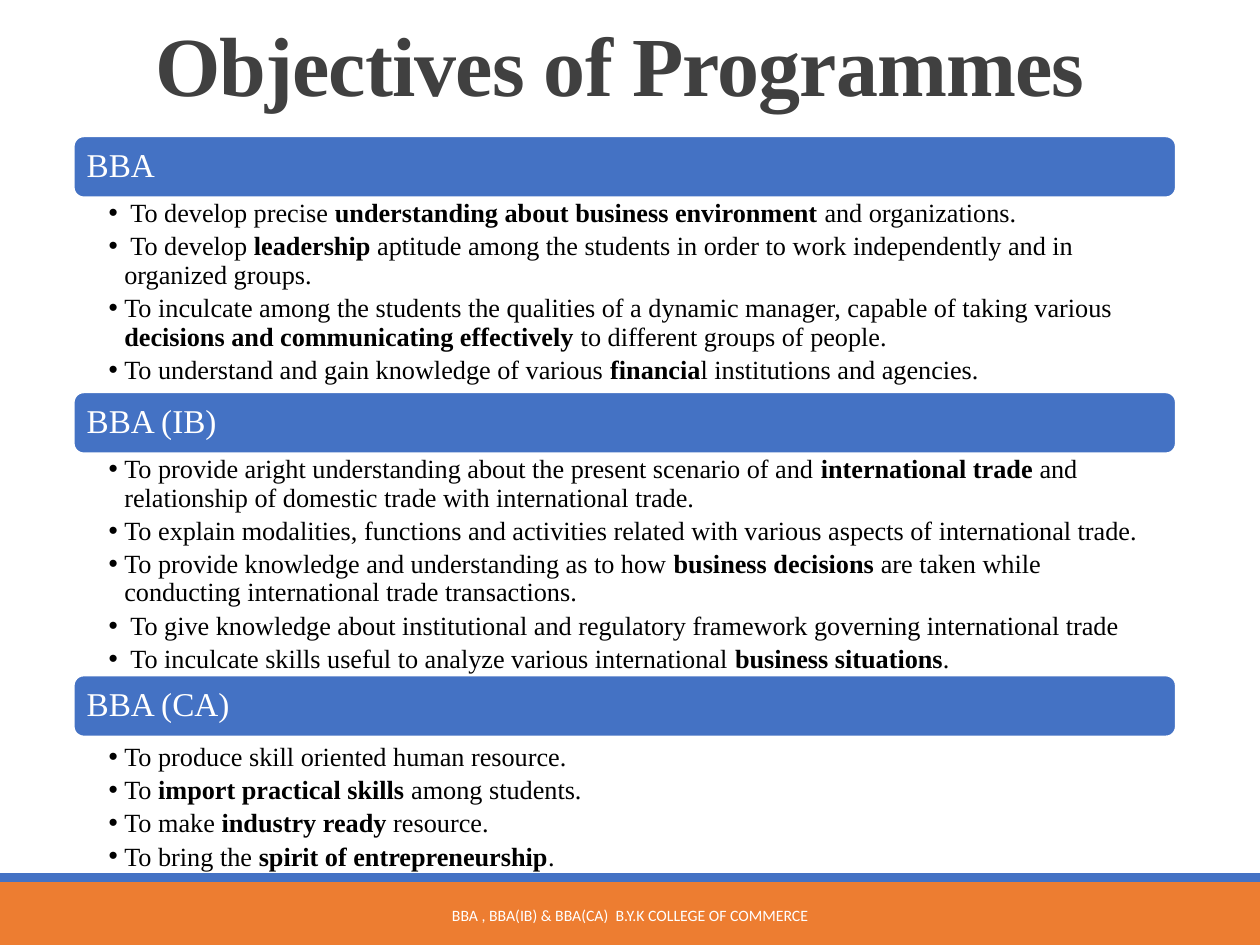
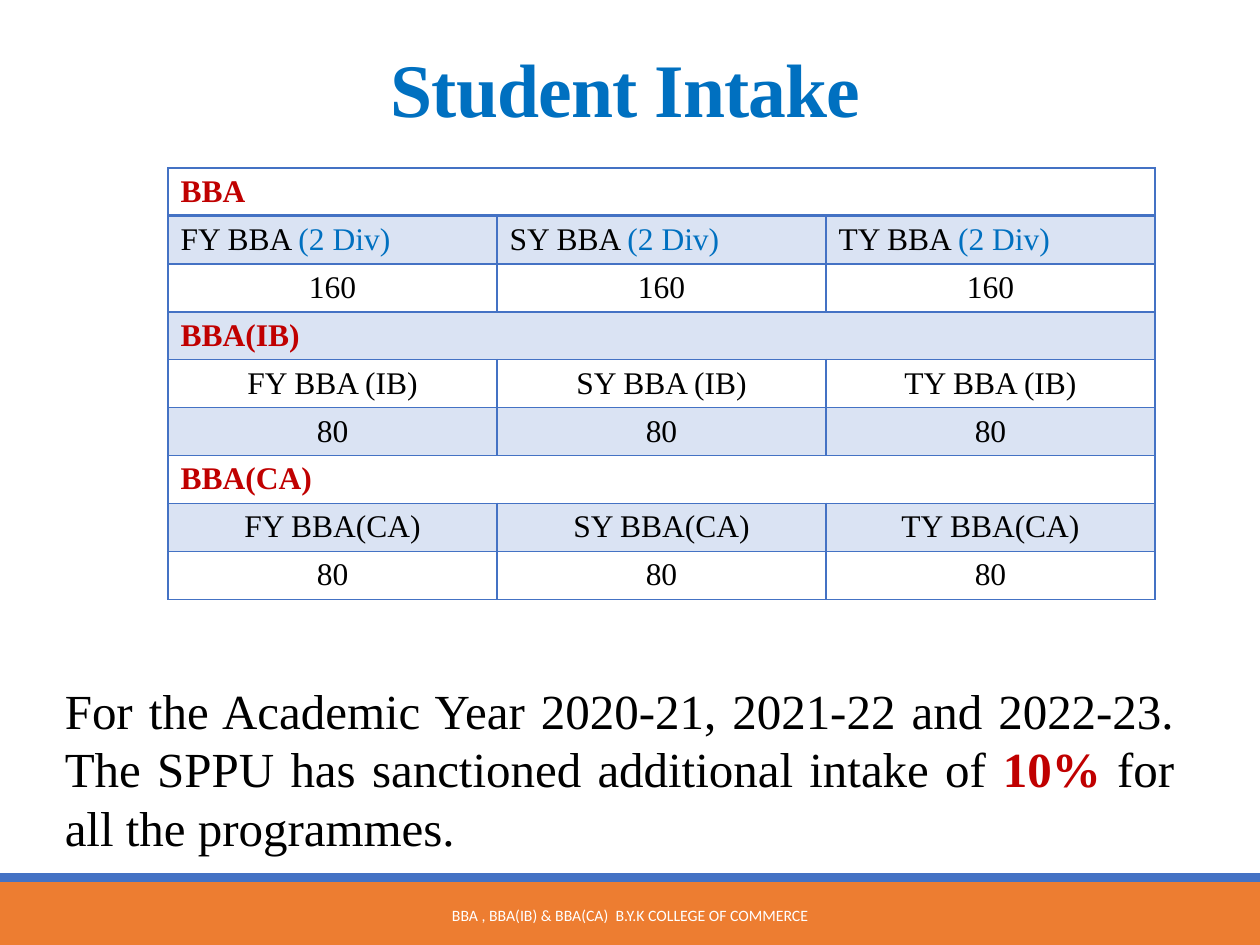
from lxml import etree
from pptx import Presentation
from pptx.dml.color import RGBColor
from pptx.enum.shapes import MSO_SHAPE
from pptx.enum.text import MSO_ANCHOR, MSO_AUTO_SIZE, PP_ALIGN
from pptx.oxml.ns import qn
from pptx.util import Pt

RECT, ROUND_RECT = MSO_SHAPE.RECTANGLE, MSO_SHAPE.ROUNDED_RECTANGLE
TOP, MIDDLE, BOTTOM = MSO_ANCHOR.TOP, MSO_ANCHOR.MIDDLE, MSO_ANCHOR.BOTTOM
LEFT, CENTER, JUSTIFY = PP_ALIGN.LEFT, PP_ALIGN.CENTER, PP_ALIGN.JUSTIFY
NO_AUTOFIT = MSO_AUTO_SIZE.NONE

WIDTH, HEIGHT = 720, 540
SERIF, SANS = "Times New Roman", "Calibri"
COLORS = {
    "orange": "ED7D31", "blue": "4472C4", "tint": "DAE3F3", "white": "FFFFFF",
    "title": "404040", "bright": "0070C0", "red": "C00000", "black": "000000",
}
FOOTER = "BBA , BBA(IB) & BBA(CA)  B.Y.K COLLEGE OF COMMERCE"

OBJECTIVES = [
    ("BBA", 111.2, 0, [
        " To develop precise *understanding about business environment *and organizations.",
        " To develop *leadership* aptitude among the students in order to work "
        "independently and in organized groups.",
        "To inculcate among the students the qualities of a dynamic manager, capable of "
        "taking various *decisions and communicating effectively *to different groups of people.",
        "To understand and gain knowledge of various *financia*l institutions and agencies.",
    ]),
    ("BBA (IB)", 126.7, 0, [
        "To provide aright understanding about the present scenario of and "
        "*international trade *and relationship of domestic trade with international trade.",
        "To explain modalities, functions and activities related with various aspects of "
        "international trade.",
        "To provide knowledge and understanding as to how *business decisions *are taken "
        "while conducting international trade transactions.",
        " To give knowledge about institutional and regulatory framework governing "
        "international trade",
        " To inculcate skills useful to analyze various international *business situations*.",
    ]),
    ("BBA (CA)", 75.5, 2.5, [
        "To produce skill oriented human resource.",
        "To *import practical skills *among students.",
        "To make *industry ready *resource.",
        "To bring the *spirit of entrepreneurship*.",
    ]),
]
YEARS = ("FY", "SY", "TY")
INTAKE = [
    ("BBA", " BBA ", "(2 Div)", "160", LEFT),
    ("BBA(IB)", " BBA (IB)", "", "80", CENTER),
    ("BBA(CA)", " BBA(CA)", "", "80", CENTER),
]


def rgb(name):
    """Return the named colour."""
    return RGBColor.from_string(COLORS[name])


def add_run(p, text, size, color="black", bold=False, font=SERIF):
    """Append one formatted run to a paragraph."""
    r = p.add_run()
    r.text = text
    r.font.size, r.font.bold, r.font.name = Pt(size), bold, font
    r.font.color.rgb = rgb(color)
    return r


def add_marked(p, text, size, accent="black"):
    """Append text whose parts between asterisks are bold in the accent colour."""
    for i, part in enumerate(text.split("*")):
        if part:
            add_run(p, part, size, accent if i % 2 else "black", bool(i % 2))


def add_box(slide, kind, box, fill, line=None):
    """Draw a filled preset shape without shadow."""
    sp = slide.shapes.add_shape(kind, *map(Pt, box))
    sp.shadow.inherit = False
    sp.fill.solid()
    sp.fill.fore_color.rgb = rgb(fill)
    if line:
        sp.line.color.rgb = rgb(line)
        sp.line.width = Pt(1.25)
    else:
        sp.line.fill.background()
    return sp


def set_frame(tf, anchor, insets=(7.2, 3.6, 7.2, 3.6)):
    """Set wrapping, anchor and insets, and return the first paragraph."""
    tf.word_wrap, tf.auto_size, tf.vertical_anchor = True, NO_AUTOFIT, anchor
    tf.margin_left, tf.margin_top, tf.margin_right, tf.margin_bottom = map(Pt, insets)
    return tf.paragraphs[0]


def add_text(slide, box, anchor, **frame):
    """Add a wrapping text box and return its text frame."""
    tf = slide.shapes.add_textbox(*map(Pt, box)).text_frame
    set_frame(tf, anchor, **frame)
    return tf


def add_footer(slide):
    """Draw the bottom bands and the footer wording."""
    add_box(slide, RECT, (0, HEIGHT - 36, WIDTH, 36), "orange")
    add_box(slide, RECT, (0, HEIGHT - 41, WIDTH, 5), "blue")
    p = add_text(slide, (217.4, HEIGHT - 31.5, 285.1, 28.8), MIDDLE).paragraphs[0]
    p.alignment = CENTER
    add_run(p, FOOTER, 9, "white", font=SANS)


def add_titled_slide(prs, title, box, size, color, align):
    """Add a slide with its title and footer."""
    slide = prs.slides.add_slide(prs.slide_layouts[5])
    sp = slide.shapes.title
    sp.left, sp.top, sp.width, sp.height = map(Pt, box)
    p = set_frame(sp.text_frame, BOTTOM)
    p.alignment, p.line_spacing = align, 0.85
    r = add_run(p, title, size, color, True)
    r.font._element.set("spc", "-50")
    add_footer(slide)
    return slide


def add_bullet(p):
    """Give a paragraph a hanging round bullet."""
    pPr = p._p.get_or_add_pPr()
    pPr.set("marL", str(Pt(9)))
    pPr.set("indent", str(-Pt(9)))
    etree.SubElement(pPr, qn("a:buFont")).set("typeface", "Arial")
    etree.SubElement(pPr, qn("a:buChar")).set("char", "•")


def add_programme(slide, box, name, gap, items, head=35.1):
    """Draw a programme heading with its bulleted objectives below."""
    x, y, w, h = box
    sp = add_box(slide, ROUND_RECT, (x, y, w, head), "blue", "white")
    p = set_frame(sp.text_frame, MIDDLE, (5.8, 0, 5.8, 0))
    p.alignment, p.line_spacing = LEFT, 0.9
    add_run(p, name, 19, "white")
    tf = add_text(slide, (x, y + head + gap, w, h - head - gap), TOP,
                  insets=(20, 1.4, 10.8, 1.4))
    for i, item in enumerate(items):
        p = tf.add_paragraph() if i else tf.paragraphs[0]
        add_bullet(p)
        p.line_spacing, p.space_after = 0.9, Pt(2.8)
        add_marked(p, item, 15)


def objectives_slide(prs):
    """Build the slide of programme objectives."""
    slide = add_titled_slide(prs, "Objectives of Programmes ", (36, 0, 648, 68.4),
                             48, "title", CENTER)
    y = 77.8
    for name, body, gap, items in OBJECTIVES:
        h = 35.1 + gap + body
        add_programme(slide, (42, y, 630, h), name, gap, items)
        y += h


def set_borders(cell, widths):
    """Draw the left, right, top and bottom cell borders in blue."""
    tcPr = cell._tc.get_or_add_tcPr()
    for i, (side, width) in enumerate(zip("LRTB", widths)):
        ln = etree.Element(qn(f"a:ln{side}"), w=str(Pt(width)))
        fill = etree.SubElement(ln, qn("a:solidFill"))
        etree.SubElement(fill, qn("a:srgbClr")).set("val", COLORS["blue"])
        tcPr.insert(i, ln)


def add_intake_table(slide, box, row_height):
    """Add the table of intake by programme and year."""
    rows = 3 * len(INTAKE)
    tbl = slide.shapes.add_table(rows, len(YEARS), *map(Pt, box)).table
    tbl.first_row = tbl.horz_banding = False
    for i, row in enumerate(tbl.rows):
        row.height = Pt(row_height)
        for cell in row.cells:
            if i % 2:
                cell.fill.solid()
                cell.fill.fore_color.rgb = rgb("tint")
            else:
                cell.fill.background()
            set_borders(cell, (1, 1, 2 if i == 1 else 1, 2 if i == 0 else 1))
    for k, (name, suffix, note, seats, align) in enumerate(INTAKE):
        top = 3 * k
        tbl.cell(top, 0).merge(tbl.cell(top, len(YEARS) - 1))
        add_run(tbl.cell(top, 0).text_frame.paragraphs[0], name, 18, "red", True)
        for j, year in enumerate(YEARS):
            p = tbl.cell(top + 1, j).text_frame.paragraphs[0]
            p.alignment = align
            add_run(p, year + suffix, 18)
            if note:
                add_run(p, note, 18, "bright")
            p = tbl.cell(top + 2, j).text_frame.paragraphs[0]
            p.alignment = CENTER
            add_run(p, seats, 18)


def intake_slide(prs):
    """Build the slide of student intake."""
    slide = add_titled_slide(prs, "Student Intake", (216, 24, 293.8, 55.4),
                             43.2, "bright", LEFT)
    add_intake_table(slide, (96, 96, 564, 246.6), 27.4)
    p = add_text(slide, (30, 384, 648, 110), MIDDLE).paragraphs[0]
    p.alignment = JUSTIFY
    add_marked(p, "For the Academic Year 2020-21, 2021-22 and 2022-23. The SPPU has "
                  "sanctioned additional intake of *10% *for all the programmes.", 28, "red")


def main():
    """Build and save the presentation."""
    prs = Presentation()
    prs.slide_width, prs.slide_height = Pt(WIDTH), Pt(HEIGHT)
    objectives_slide(prs)
    intake_slide(prs)
    prs.save("out.pptx")


if __name__ == "__main__":
    main()
